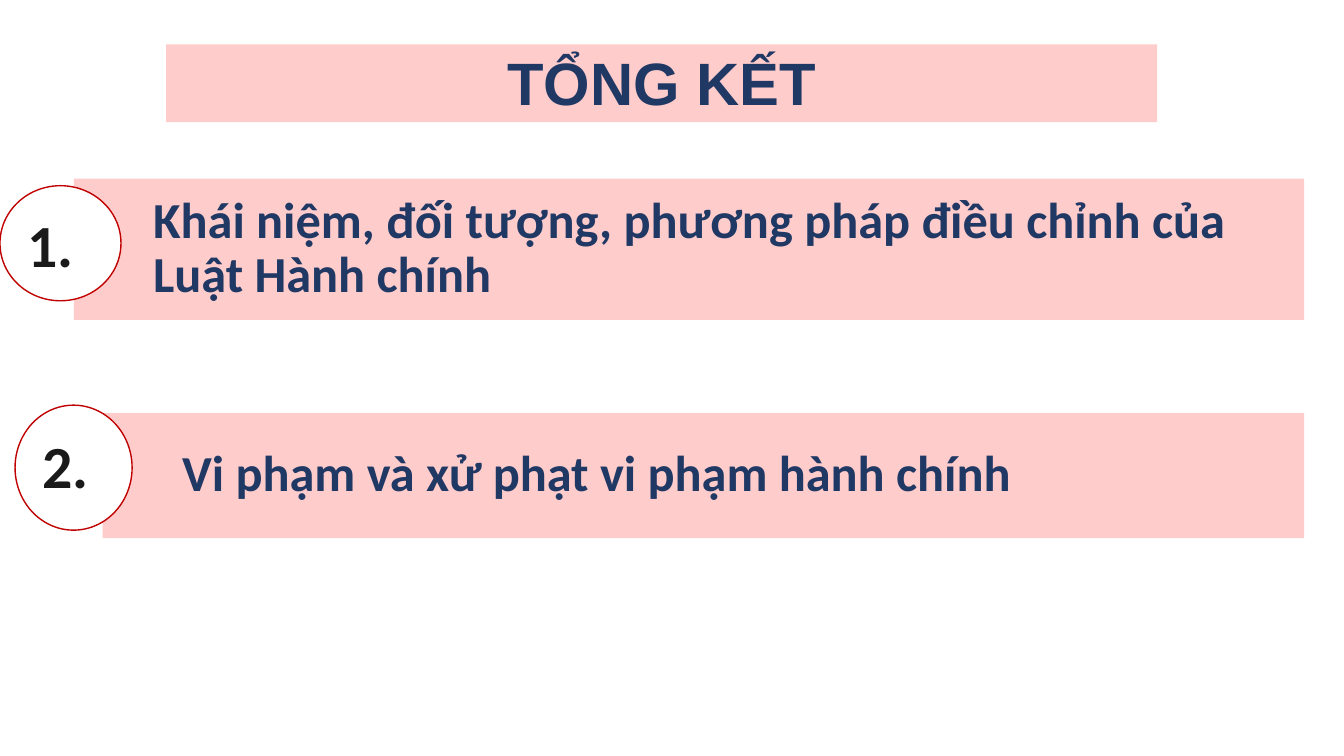
from pptx import Presentation
from pptx.dml.color import RGBColor
from pptx.enum.shapes import MSO_SHAPE
from pptx.enum.text import MSO_ANCHOR, PP_ALIGN
from pptx.util import Cm, Pt

RECT, OVAL = MSO_SHAPE.RECTANGLE, MSO_SHAPE.OVAL
TOP, MIDDLE = MSO_ANCHOR.TOP, MSO_ANCHOR.MIDDLE
LEFT, CENTER, JUSTIFY = PP_ALIGN.LEFT, PP_ALIGN.CENTER, PP_ALIGN.JUSTIFY

PINK, NAVY, RED, WHITE, BLACK = "FFCCCC", "203864", "C00000", "FFFFFF", "1A1A1A"


def color(value):
    return RGBColor.from_string(value)


def add_panel(s, kind, box, fill, line=None):
    sp = s.shapes.add_shape(kind, *(Cm(v) for v in box))
    sp.shadow.inherit = False
    sp.fill.solid()
    sp.fill.fore_color.rgb = color(fill)
    if line:
        sp.line.color.rgb = color(line)
        sp.line.width = Pt(1)
    else:
        sp.line.fill.background()
    return sp


def set_text(sp, text, size, font, ink, align=LEFT, anchor=TOP,
             spacing=1.0, margins=(0.25, 0.13, 0.25, 0.13)):
    tf = sp.text_frame
    tf.word_wrap = True
    tf.vertical_anchor = anchor
    tf.margin_left, tf.margin_top, tf.margin_right, tf.margin_bottom = map(Cm, margins)
    p = tf.paragraphs[0]
    p.text = text
    p.alignment = align
    p.line_spacing = spacing
    r = p.runs[0]
    r.font.size = Pt(size)
    r.font.name = font
    r.font.bold = True
    r.font.color.rgb = color(ink)


def add_title(s, box, text):
    sp = add_panel(s, RECT, box, PINK)
    set_text(sp, text, 42.7, "Arial", NAVY, CENTER, TOP, 0.9, (0.25,) * 4)


def add_item(s, box, badge, number, text, align):
    """Bar filling box, with a numbered badge offset from its top left corner."""
    left, top, _, _ = box
    dx, dy, width, height = badge
    # Bar
    sp = add_panel(s, RECT, box, PINK)
    set_text(sp, text, 36, "Calibri", NAVY, align, MIDDLE, 0.9,
             (2, 0.25, 0.25, 0.25))
    # Number badge
    sp = add_panel(s, OVAL, (left + dx, top + dy, width, height), WHITE, RED)
    set_text(sp, number, 42.7, "Calibri", BLACK)


def main():
    prs = Presentation()
    prs.slide_width, prs.slide_height = Cm(33.87), Cm(19.05)
    s = prs.slides.add_slide(prs.slide_layouts[6])

    add_title(s, (4.19, 1.12, 24.97, 1.96), "TỔNG KẾT")
    add_item(s, (1.86, 4.5, 31.01, 3.56), (-1.86, 0.18, 3.05, 2.9), "1.",
             "Khái niệm, đối tượng, phương pháp điều chỉnh của Luật Hành chính",
             LEFT)
    add_item(s, (2.59, 10.41, 30.28, 3.15), (-2.21, -0.2, 2.95, 3.15), "2.",
             "Vi phạm và xử phạt vi phạm hành chính", JUSTIFY)

    prs.save("out.pptx")


if __name__ == "__main__":
    main()
